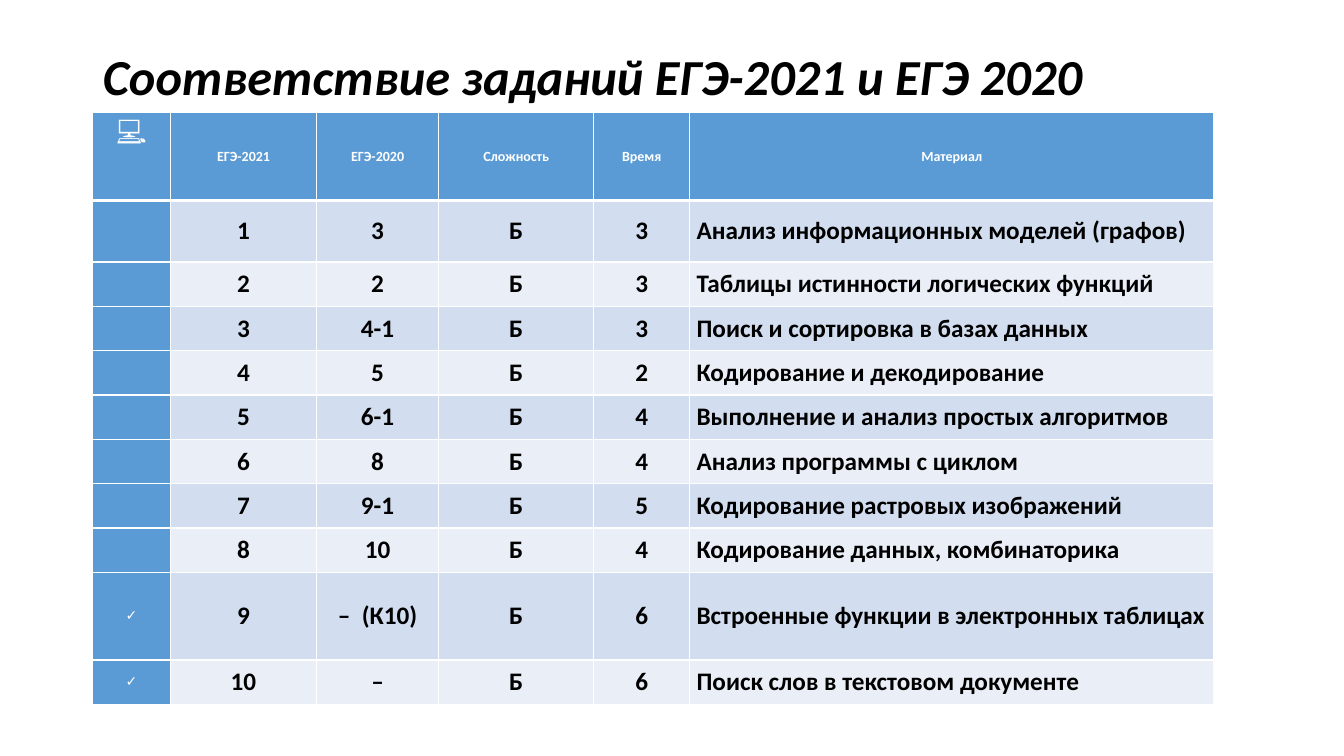
from lxml.etree import SubElement
from pptx import Presentation
from pptx.dml.color import RGBColor
from pptx.enum.text import MSO_ANCHOR, PP_ALIGN
from pptx.oxml.ns import qn
from pptx.util import Inches, Pt

FONT = "Calibri"
COLORS = {"head": "5B9BD5", "odd": "D2DEEF", "even": "EAEFF7",
          "white": "FFFFFF", "black": "000000"}
LEFT, TABLE_TOP = 0.92, 1.12
COL_WIDTHS = [0.77, 1.45, 1.21, 1.54, 0.95, 5.2]
ROW, TALL_ROW = 0.44, 0.87
ROW_HEIGHTS = [TALL_ROW, 0.61] + [ROW] * 7 + [TALL_ROW, ROW]
HEADER = ["💻", "ЕГЭ-2021", "ЕГЭ-2020", "Сложность", "Время", "Материал"]
TASKS = [
    ("", "3", "3", "Анализ информационных моделей (графов)"),
    ("", "2", "3", "Таблицы истинности логических функций"),
    ("", "4-1", "3", "Поиск и сортировка в базах данных"),
    ("", "5", "2", "Кодирование и декодирование"),
    ("", "6-1", "4", "Выполнение и анализ простых алгоритмов"),
    ("", "8", "4", "Анализ программы с циклом"),
    ("", "9-1", "5", "Кодирование растровых изображений"),
    ("", "10", "4", "Кодирование данных, комбинаторика"),
    ("✓", "–  (К10)", "6", "Встроенные функции в электронных таблицах"),
    ("✓", "–", "6", "Поиск слов в текстовом документе"),
]


def rgb(name):
    """Return the named colour."""
    return RGBColor.from_string(COLORS[name])


def set_font(p, size, color, italic=False):
    """Apply the slide's bold typeface to a paragraph."""
    f = p.font
    f.name, f.size, f.bold, f.italic = FONT, Pt(size), True, italic
    f.color.rgb = rgb(color)


def set_borders(cell, top=1, bottom=1):
    """Draw white lines on the four sides of a cell."""
    tc_pr = cell._tc.get_or_add_tcPr()
    for tag, width in (("lnL", 1), ("lnR", 1), ("lnT", top), ("lnB", bottom)):
        ln = SubElement(tc_pr, qn(f"a:{tag}"), w=str(Pt(width)))
        fill = SubElement(ln, qn("a:solidFill"))
        SubElement(fill, qn("a:srgbClr"), val=COLORS["white"])


def fill_cell(cell, text, row, col):
    """Write and style one cell according to its row and column."""
    head = row == 0 or col == 0
    icon = row == 0 and col == 0
    set_borders(cell, top=3 if row == 1 else 1, bottom=3 if row == 0 else 1)
    cell.fill.solid()
    cell.fill.fore_color.rgb = rgb("head" if head else "odd" if row % 2 else "even")
    cell.margin_left = cell.margin_right = Inches(0.07)
    cell.margin_top = cell.margin_bottom = 0
    cell.vertical_anchor = MSO_ANCHOR.TOP if icon else MSO_ANCHOR.MIDDLE
    cell.text = text
    p = cell.text_frame.paragraphs[0]
    material = row > 0 and col == len(COL_WIDTHS) - 1
    p.alignment = PP_ALIGN.LEFT if material else PP_ALIGN.CENTER
    set_font(p, 20 if icon else 10 if head else 18, "white" if head else "black")


def add_title(s, text):
    """Place the heading above the table."""
    sp = s.shapes.title
    sp.left, sp.top, sp.width, sp.height = map(Inches, (LEFT, 0.4, 11.5, 1.45))
    tf = sp.text_frame
    tf.text = text
    tf.word_wrap = True
    tf.vertical_anchor = MSO_ANCHOR.TOP
    tf.margin_top = Inches(0.12)
    p = tf.paragraphs[0]
    p.alignment = PP_ALIGN.LEFT
    p.line_spacing = 0.9
    set_font(p, 36, "black", italic=True)


def add_task_table(s):
    """Add the table that matches the tasks of the two years."""
    rows = [HEADER] + [(mark, str(n), old, "Б", time, material)
                       for n, (mark, old, time, material) in enumerate(TASKS, 1)]
    tbl = s.shapes.add_table(
        len(rows), len(COL_WIDTHS), Inches(LEFT), Inches(TABLE_TOP),
        Inches(sum(COL_WIDTHS)), Inches(sum(ROW_HEIGHTS))).table
    tbl.first_col = True
    for column, width in zip(tbl.columns, COL_WIDTHS):
        column.width = Inches(width)
    for r, (values, height) in enumerate(zip(rows, ROW_HEIGHTS)):
        tbl.rows[r].height = Inches(height)
        for c, text in enumerate(values):
            fill_cell(tbl.cell(r, c), text, r, c)


def main():
    """Build the slide and save it."""
    prs = Presentation()
    prs.slide_width, prs.slide_height = Inches(13.33), Inches(7.5)
    s = prs.slides.add_slide(prs.slide_layouts[5])
    add_title(s, "Соответствие заданий ЕГЭ-2021 и ЕГЭ 2020")
    add_task_table(s)
    prs.save("out.pptx")


if __name__ == "__main__":
    main()
